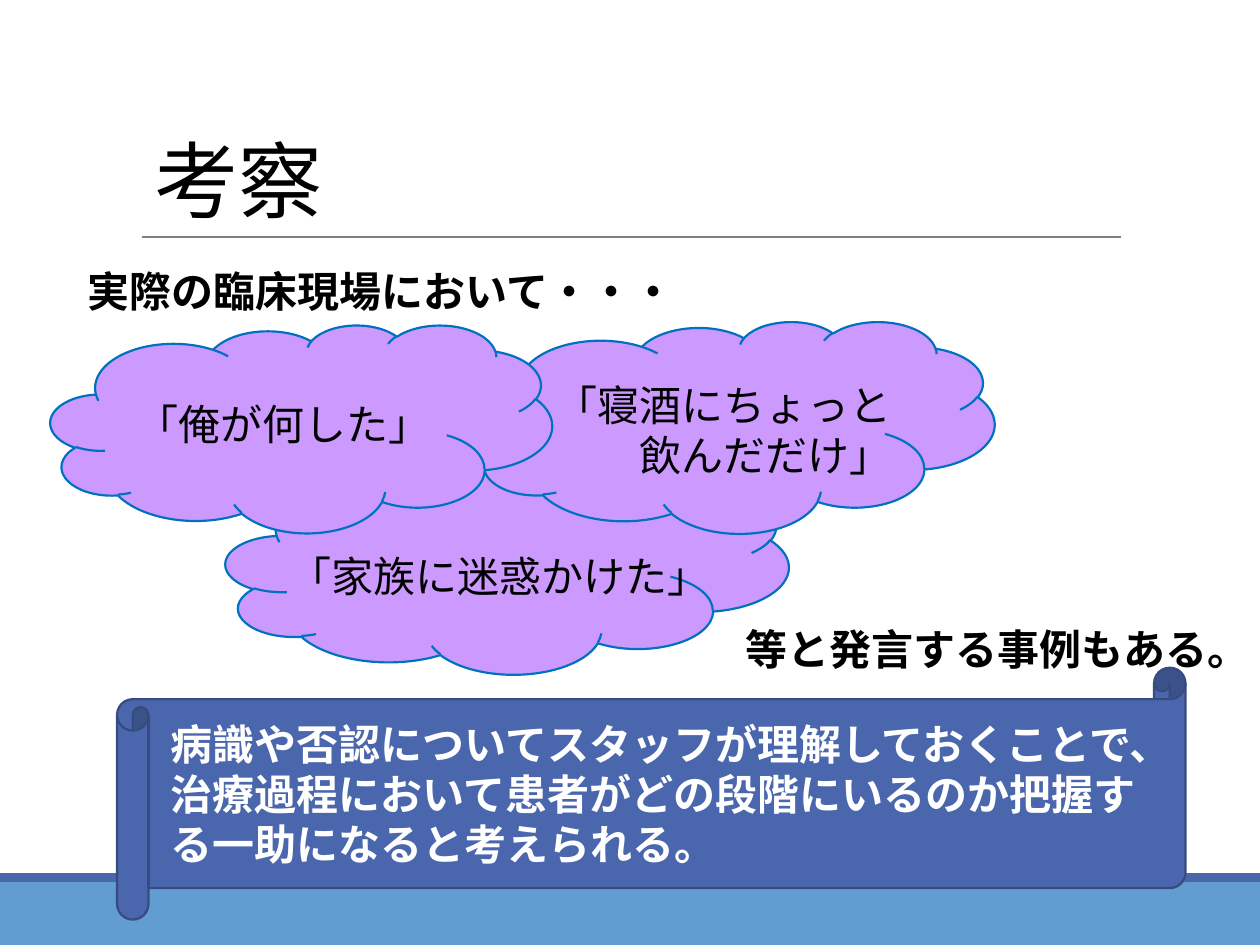
import pptx
import pptx.util
import pptx.dml.color
import pptx.enum.shapes
import pptx.enum.text
import pptx.oxml
import pptx.oxml.ns
from dataclasses import dataclass
from pptx.util import Cm, Pt

MSO = pptx.enum.shapes.MSO_SHAPE
ALIGN = pptx.enum.text.PP_ALIGN
ANCHOR = pptx.enum.text.MSO_ANCHOR
FONT = "Noto Sans CJK JP"
COLORS = {
    "black": "000000", "white": "FFFFFF", "rule": "808080",
    "band": "629DD1", "accent": "4A66AC", "accent_dark": "374B7F",
    "cloud": "CC99FF", "cloud_line": "0070C0",
}


@dataclass
class Box:
    """A place on the slide, in centimetres."""
    left: float
    top: float
    width: float
    height: float

    def lengths(self) -> list:
        return [Cm(v) for v in (self.left, self.top, self.width, self.height)]


@dataclass
class Text:
    lines: list[str]
    size: int = 24
    bold: bool = False
    color: str = "black"
    align: ALIGN = ALIGN.LEFT
    last_indent: float = 0


def rgb(name: str) -> pptx.dml.color.RGBColor:
    return pptx.dml.color.RGBColor.from_string(COLORS[name])


def write(tf, text: Text, **frame) -> None:
    """Fill a text frame, one paragraph a line; frame holds its settings."""
    for name, value in {"word_wrap": True, **frame}.items():
        setattr(tf, name, value)
    for i, line in enumerate(text.lines):
        p = tf.paragraphs[0] if i == 0 else tf.add_paragraph()
        p.alignment = text.align
        r = p.add_run()
        r.text = line
        for name, value in {"name": FONT, "size": Pt(text.size), "bold": text.bold}.items():
            setattr(r.font, name, value)
        r.font.color.rgb = rgb(text.color)
        ea = pptx.oxml.parse_xml(f'<a:ea {pptx.oxml.ns.nsdecls("a")} typeface="{FONT}"/>')
        r.font._element.find(pptx.oxml.ns.qn("a:latin")).addnext(ea)
    if text.last_indent:
        p._p.get_or_add_pPr().set("marL", str(Cm(text.last_indent)))


def add_shape(s, kind: MSO, box: Box, fill: str, line: str | None = None):
    sp = s.shapes.add_shape(kind, *box.lengths())
    sp.shadow.inherit = False
    sp.fill.solid()
    sp.fill.fore_color.rgb = rgb(fill)
    if line:
        sp.line.color.rgb = rgb(line)
        sp.line.width = Pt(1.25)
    else:
        sp.line.fill.background()
    return sp


def add_cloud(s, box: Box):
    return add_shape(s, MSO.CLOUD, box, "cloud", "cloud_line")


def add_text(s, box: Box, text: Text) -> None:
    write(s.shapes.add_textbox(*box.lengths()).text_frame, text)


def add_rule(s, left: float, right: float, y: float) -> None:
    c = s.shapes.add_connector(pptx.enum.shapes.MSO_CONNECTOR.STRAIGHT,
                               Cm(left), Cm(y), Cm(right), Cm(y))
    c.line.color.rgb = rgb("rule")
    c.line.width = Pt(1)
    c._element.spPr.append(
        pptx.oxml.parse_xml(f'<a:effectLst {pptx.oxml.ns.nsdecls("a")}/>'))


def main() -> None:
    prs = pptx.Presentation()
    prs.slide_width, prs.slide_height = Cm(25.4), Cm(19.05)
    s = prs.slides.add_slide(prs.slide_layouts[6])

    add_shape(s, MSO.RECTANGLE, Box(0, 17.78, 25.4, 1.27), "band")
    add_shape(s, MSO.RECTANGLE, Box(0, 17.6, 25.4, 0.18), "accent")
    add_cloud(s, Box(4.55, 9.4, 11.35, 4.19))

    add_rule(s, 2.87, 22.6, 4.78)
    add_text(s, Box(2.87, 2.46, 10.85, 2.31), Text(["考察"], size=48))
    add_text(s, Box(1.52, 5.23, 16.03, 1.27),
             Text(["実際の臨床現場において・・・"], bold=True))
    add_text(s, Box(14.78, 12.45, 11.81, 1.27),
             Text(["等と発言する事例もある。"], bold=True))
    add_text(s, Box(5.59, 10.97, 10.19, 1.27), Text(["「家族に迷惑かけた」"]))

    add_cloud(s, Box(9.53, 6.48, 10.52, 4.27))
    sp = add_cloud(s, Box(1.02, 6.55, 10.11, 4.19))
    write(sp.text_frame, Text(["「俺が何した」"], align=ALIGN.CENTER),
          vertical_anchor=ANCHOR.MIDDLE)
    add_text(s, Box(10.95, 7.52, 8.61, 2.31),
             Text(["「寝酒にちょっと", "飲んだだけ」"], last_indent=1.69))

    sp = add_shape(s, MSO.HORIZONTAL_SCROLL, Box(2.36, 13.46, 21.54, 5.08),
                   "accent", "accent_dark")
    conclusion = Text(["病識や否認についてスタッフが理解しておくことで、",
                       "治療過程において患者がどの段階にいるのか把握す",
                       "る一助になると考えられる。"], bold=True, color="white")
    write(sp.text_frame, conclusion, vertical_anchor=ANCHOR.MIDDLE, margin_left=Cm(0.44))

    prs.save("out.pptx")


if __name__ == "__main__":
    main()
